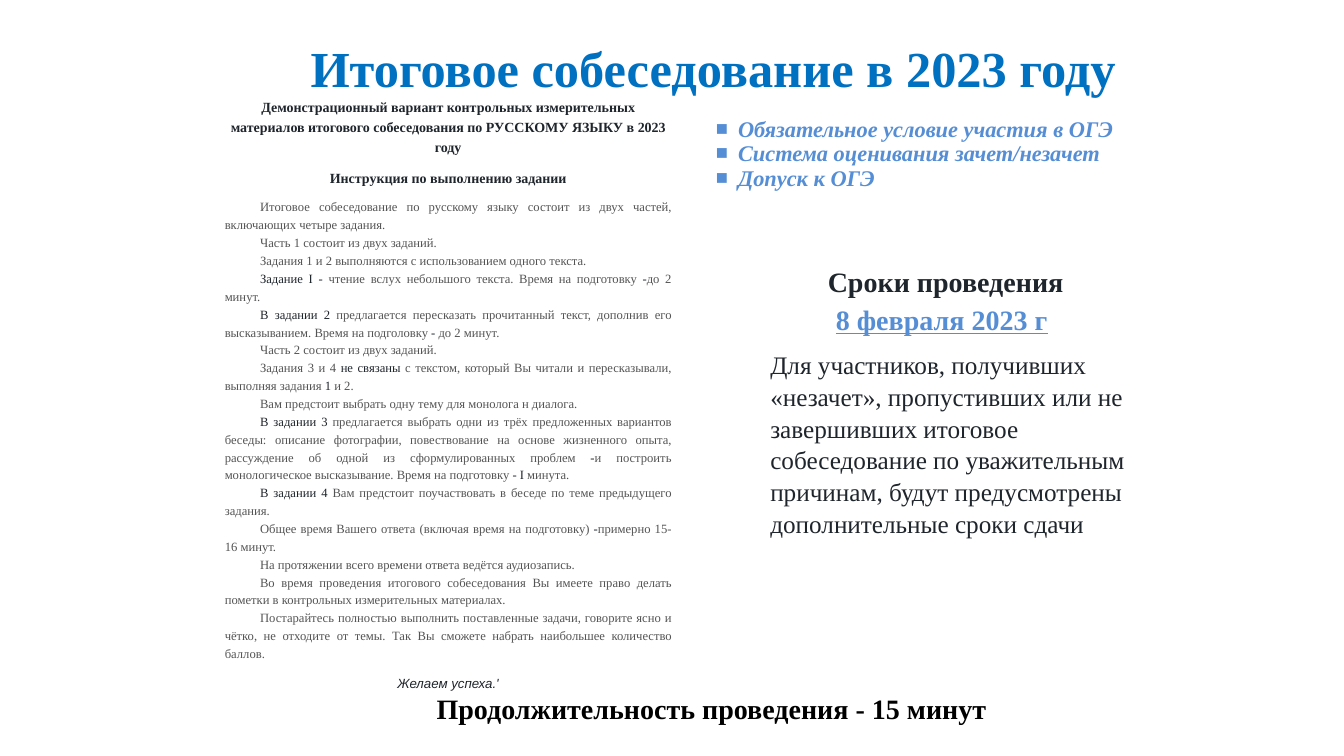
from lxml import etree
from pptx import Presentation
from pptx.dml.color import RGBColor
from pptx.enum.text import MSO_ANCHOR, MSO_AUTO_SIZE, PP_ALIGN
from pptx.oxml.ns import qn
from pptx.util import Inches, Pt

LEFT, MID, JUST = PP_ALIGN.LEFT, PP_ALIGN.CENTER, PP_ALIGN.JUSTIFY
TOP, FIXED = MSO_ANCHOR.TOP, MSO_AUTO_SIZE.NONE
HUES = {"white": "FFFFFF", "title": "0070C0", "dark": "1F252C",
        "gray": "555455", "blue": "558ED5", "black": "000000"}
HEADS = [
    "Демонстрационный вариант контрольных измерительных материалов "
    "итогового собеседования по РУССКОМУ ЯЗЫКУ в 2023 году",
    "Инструкция по выполнению задании",
]
RULES = [
    ["Итоговое собеседование по русскому языку состоит из двух частей, включающих четыре задания."],
    ["Часть 1 состоит из двух заданий."],
    ["Задания 1 и 2 выполняются с использованием одного текста."],
    ["", "Задание I - ", "чтение вслух небольшого текста. Время на подготовку ", "-", "до 2 минут."],
    ["", "В задании 2 ", "предлагается пересказать прочитанный текст, дополнив его высказыванием. "
     "Время на подголовку ", "- ", "до 2 минут."],
    ["Часть 2 состоит из двух заданий."],
    ["Задания 3 и 4 ", "не связаны ", "с текстом, который Вы читали и пересказывали, выполняя задания ",
     "1 ", "и 2."],
    ["Вам предстоит выбрать одну тему для монолога н диалога."],
    ["", "В задании 3 ", "предлагается выбрать одни из трёх предложенных вариантов беседы: описание "
     "фотографии, повествование на основе жизненного опыта, рассуждение об одной из сформулированных "
     "проблем ", "-", "и построить монологическое высказывание. Время на подготовку ", "- I ", "минута."],
    ["", "В задании 4 ", "Вам предстоит поучаствовать в беседе по теме предыдущего задания."],
    ["Общее время Вашего ответа (включая время на подготовку) ", "-", "примерно 15-16 минут."],
    ["На протяжении всего времени ответа ведётся аудиозапись."],
    ["Во время проведения итогового собеседования Вы имеете право делать пометки в контрольных "
     "измерительных материалах."],
    ["Постарайтесь полностью выполнить поставленные задачи, говорите ясно и чётко, не отходите от темы. "
     "Так Вы сможете набрать наибольшее количество баллов."],
]
FACTS = ["Обязательное условие участия в ОГЭ", "Система оценивания зачет/незачет", "Допуск к ОГЭ"]
LATE = ("Для участников, получивших «незачет», пропустивших или не завершивших итоговое "
        "собеседование по уважительным причинам, будут предусмотрены дополнительные сроки сдачи")


class Board:
    """Holds the text style and the current slide."""

    def __init__(self, slide, font):
        self.slide, self.font = slide, font

    def frame(self, shape, x, y, w, h, wrap=True):
        shape.left, shape.top, shape.width, shape.height = map(Inches, (x, y, w, h))
        shape.fill.solid()
        shape.fill.fore_color.rgb = RGBColor.from_string(HUES["white"])
        frame = shape.text_frame
        frame.auto_size, frame.word_wrap = FIXED, wrap
        frame.vertical_anchor = TOP
        frame.margin_left = frame.margin_right = frame.margin_top = frame.margin_bottom = 0
        return frame

    def title(self, *spot):
        return self.frame(self.slide.shapes.title, *spot)

    def box(self, *spot, wrap=True):
        shape = self.slide.shapes.add_textbox(0, 0, 0, 0)
        return self.frame(shape, *spot, wrap=wrap)

    def para(self, frame, align=LEFT, indent=0, space=1.0, after=0):
        para = frame.paragraphs[0]
        if para.runs:
            para = frame.add_paragraph()
        para.alignment, para.line_spacing = align, space
        para.space_before, para.space_after = Pt(0), Pt(after)
        props = para._p.get_or_add_pPr()
        props.set("marL", "0")
        props.set("indent", str(Inches(indent)))
        return para

    def run(self, para, text, size, hue, bold=False, italic=False, line=False, font=None):
        run = para.add_run()
        run.text = text
        style = run.font
        style.name, style.size = font or self.font, Pt(size)
        style.bold, style.italic, style.underline = bold, italic, line
        style.color.rgb = RGBColor.from_string(HUES[hue])

    def bullet(self, para, sign, gap):
        props = para._p.get_or_add_pPr()
        props.set("marL", str(Inches(gap)))
        props.set("indent", str(Inches(-gap)))
        etree.SubElement(props, qn("a:buSzPct")).set("val", "90000")
        etree.SubElement(props, qn("a:buFont")).set("typeface", self.font)
        etree.SubElement(props, qn("a:buChar")).set("char", sign)


def main():
    deck = Presentation()
    deck.slide_width, deck.slide_height = Inches(13.33), Inches(7.5)
    board = Board(deck.slides.add_slide(deck.slide_layouts[5]), "Times New Roman")

    title = board.title(2.51, 0.37, 9, 0.48)
    board.run(board.para(title, indent=0.57), "Итоговое собеседование в 2023 году", 36, "title", bold=True)

    guide = board.box(2.23, 0.95, 4.43, 5.76)
    for head in HEADS:
        board.run(board.para(guide, MID, space=1.18, after=7.7), head, 10, "dark", bold=True)
    for rule in RULES:
        para = board.para(guide, JUST, 0.35, 1.18, 7.7 if rule is RULES[-1] else 0)
        for spot, part in enumerate(rule):
            if part:
                board.run(para, part, 9, "dark" if spot % 2 else "gray")
    board.run(board.para(guide, MID, space=1.24), "Желаем успеха.'", 9.5, "dark", italic=True, font="Arial")

    facts = board.box(7.1, 1.14, 4.09, 0.86)
    for fact, space in zip(FACTS, (1.0, 0.92, 0.91)):
        para = board.para(facts, space=space)
        board.bullet(para, "■", 0.22)
        board.run(para, fact, 16, "blue", bold=True, italic=True)

    dates = board.box(7.64, 2.62, 3.54, 2.65)
    board.run(board.para(dates, indent=0.57, after=3.5), "Сроки проведения", 20, "dark", bold=True)
    board.run(board.para(dates, indent=0.65, after=8.4), "8 февраля 2023 г", 20, "blue", bold=True, line=True)
    board.run(board.para(dates, space=1.05), LATE, 18, "dark")

    length = board.box(4.33, 6.86, 5.53, 0.29, wrap=False)
    board.run(board.para(length), "Продолжительность проведения - 15 минут", 20, "black", bold=True)

    deck.save("out.pptx")


if __name__ == "__main__":
    main()
